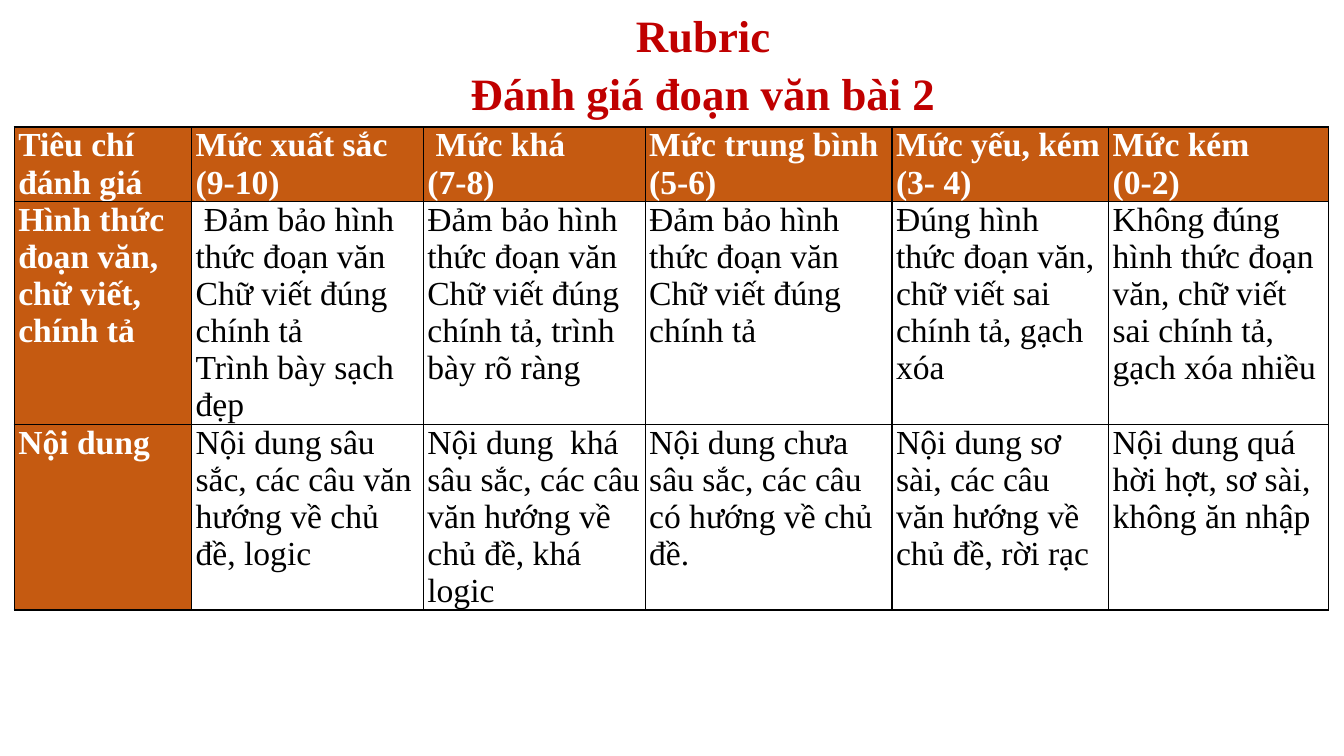
import pptx
import pptx.dml.color
import pptx.enum.text
import pptx.oxml
import pptx.oxml.ns
import pptx.util
from pptx.util import Cm

# Content: a newline starts a new paragraph
TITLE = "Rubric\n Đánh giá đoạn văn bài 2 "
RUBRIC = [
    ["Tiêu chí đánh giá", "Mức xuất sắc\n(9-10)", " Mức khá\n(7-8)",
     "Mức trung bình\n(5-6)", "Mức yếu, kém\n(3- 4)", "Mức kém\n(0-2)"],
    ["Hình thức đoạn văn, chữ viết, chính tả",
     " Đảm bảo hình thức đoạn văn\nChữ viết đúng chính tả\nTrình bày sạch đẹp",
     "Đảm bảo hình thức đoạn văn\nChữ viết đúng chính tả, trình bày rõ ràng",
     "Đảm bảo hình thức đoạn văn\nChữ viết đúng chính tả",
     "Đúng hình thức đoạn văn, chữ viết sai chính tả, gạch xóa",
     "Không đúng hình thức đoạn văn, chữ viết sai chính tả, gạch xóa nhiều"],
    ["Nội dung",
     "Nội dung sâu sắc, các câu văn hướng về chủ đề, logic",
     "Nội dung  khá sâu sắc, các câu văn hướng về chủ đề, khá logic",
     "Nội dung chưa sâu sắc, các câu có hướng về chủ đề.",
     "Nội dung sơ sài, các câu văn hướng về chủ đề, rời rạc",
     "Nội dung quá hời hợt, sơ sài, không ăn nhập"],
]
COLUMN_WIDTHS = [4.47, 5.84, 5.59, 6.22, 5.46, 5.54]
ROW_LINES = [2, 6, 5]
LINE_HEIGHT = 0.935

THEME = {
    "font": "Times New Roman",
    "title": {"size": 32, "color": "C00000", "bold": True},
    "heading": {"size": 24, "color": "FFFFFF", "bold": True},
    "body": {"size": 24, "color": "000000", "bold": False},
    "heading_fill": "C55A11",
    "border": "000000",
}


def rgb(code):
    return pptx.dml.color.RGBColor.from_string(code)


def write(frame, text, style, **para_format):
    for index, line in enumerate(text.split("\n")):
        para = frame.paragraphs[0] if index == 0 else frame.add_paragraph()
        for name, value in para_format.items():
            setattr(para, name, value)
        span = para.add_run()
        span.text = line
        font_format = {"name": THEME["font"], "size": pptx.util.Pt(style["size"]),
                       "bold": style["bold"]}
        for name, value in font_format.items():
            setattr(span.font, name, value)
        span.font.color.rgb = rgb(style["color"])


def add_borders(cell):
    properties = cell._tc.get_or_add_tcPr()
    for index, side in enumerate(("lnL", "lnR", "lnT", "lnB")):
        properties.insert(index, pptx.oxml.parse_xml(
            f'<a:{side} {pptx.oxml.ns.nsdecls("a")} w="12700"><a:solidFill>'
            f'<a:srgbClr val="{THEME["border"]}"/></a:solidFill></a:{side}>'))


def add_rubric(page):
    heights = [lines * LINE_HEIGHT for lines in ROW_LINES]
    table = page.shapes.add_table(
        len(RUBRIC), len(COLUMN_WIDTHS), Cm(0.36), Cm(3.2),
        Cm(sum(COLUMN_WIDTHS)), Cm(sum(heights))).table
    for column, width in zip(table.columns, COLUMN_WIDTHS):
        column.width = Cm(width)
    for row, height in zip(table.rows, heights):
        row.height = Cm(height)

    margins = {"margin_left": Cm(0.1), "margin_right": Cm(0.1),
               "margin_top": 0, "margin_bottom": 0}
    for r, texts in enumerate(RUBRIC):
        for c, text in enumerate(texts):
            cell = table.cell(r, c)
            for name, value in margins.items():
                setattr(cell, name, value)
            is_heading = r == 0 or c == 0
            if is_heading:
                cell.fill.solid()
                cell.fill.fore_color.rgb = rgb(THEME["heading_fill"])
            else:
                cell.fill.background()
            write(cell.text_frame, text, THEME["heading" if is_heading else "body"])
            add_borders(cell)


def add_title(page):
    box = page.shapes.add_textbox(Cm(8.51), Cm(0.05), Cm(18.42), Cm(3))
    frame = box.text_frame
    frame_format = {"word_wrap": True,
                    "vertical_anchor": pptx.enum.text.MSO_ANCHOR.MIDDLE}
    for name, value in frame_format.items():
        setattr(frame, name, value)
    write(frame, TITLE, THEME["title"],
          alignment=pptx.enum.text.PP_ALIGN.CENTER, line_spacing=1.07)


def main():
    deck = pptx.Presentation()
    deck.slide_width, deck.slide_height = Cm(33.87), Cm(19.05)
    page = deck.slides.add_slide(deck.slide_layouts[6])
    add_rubric(page)
    add_title(page)
    deck.save("out.pptx")


if __name__ == "__main__":
    main()
